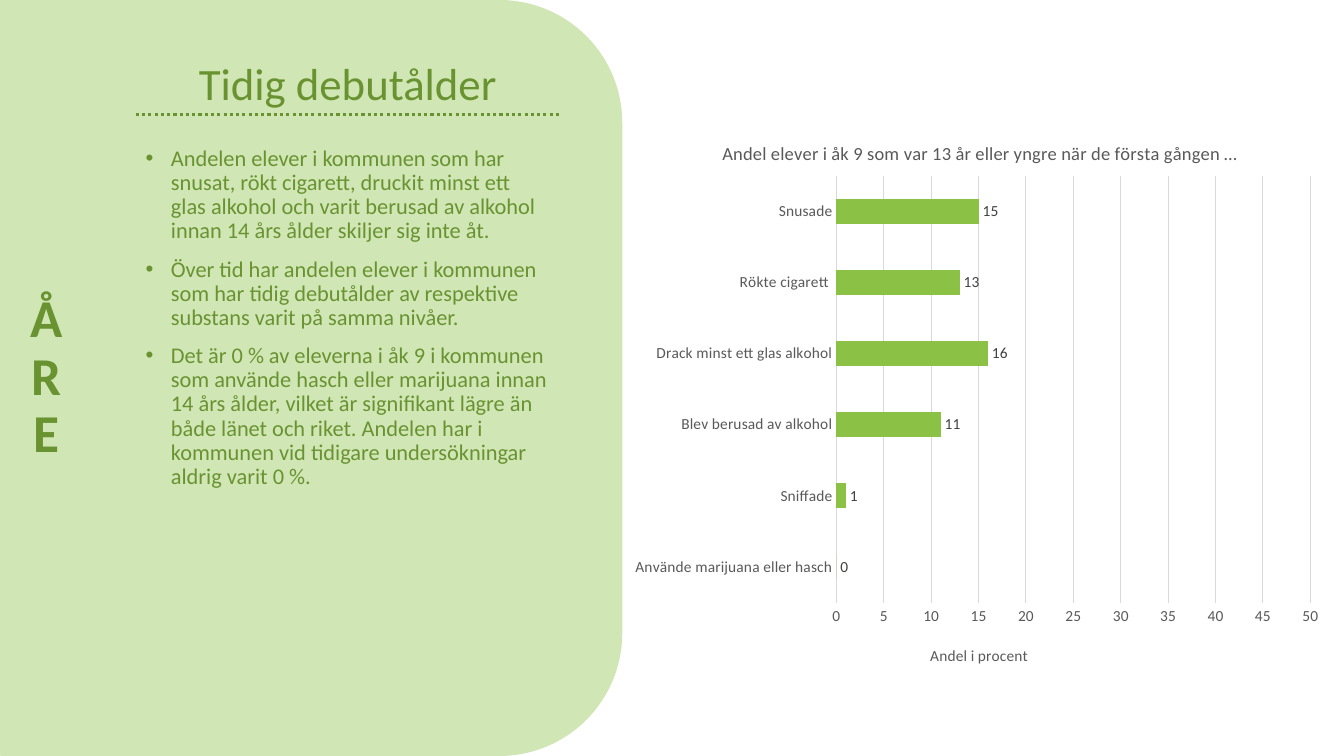
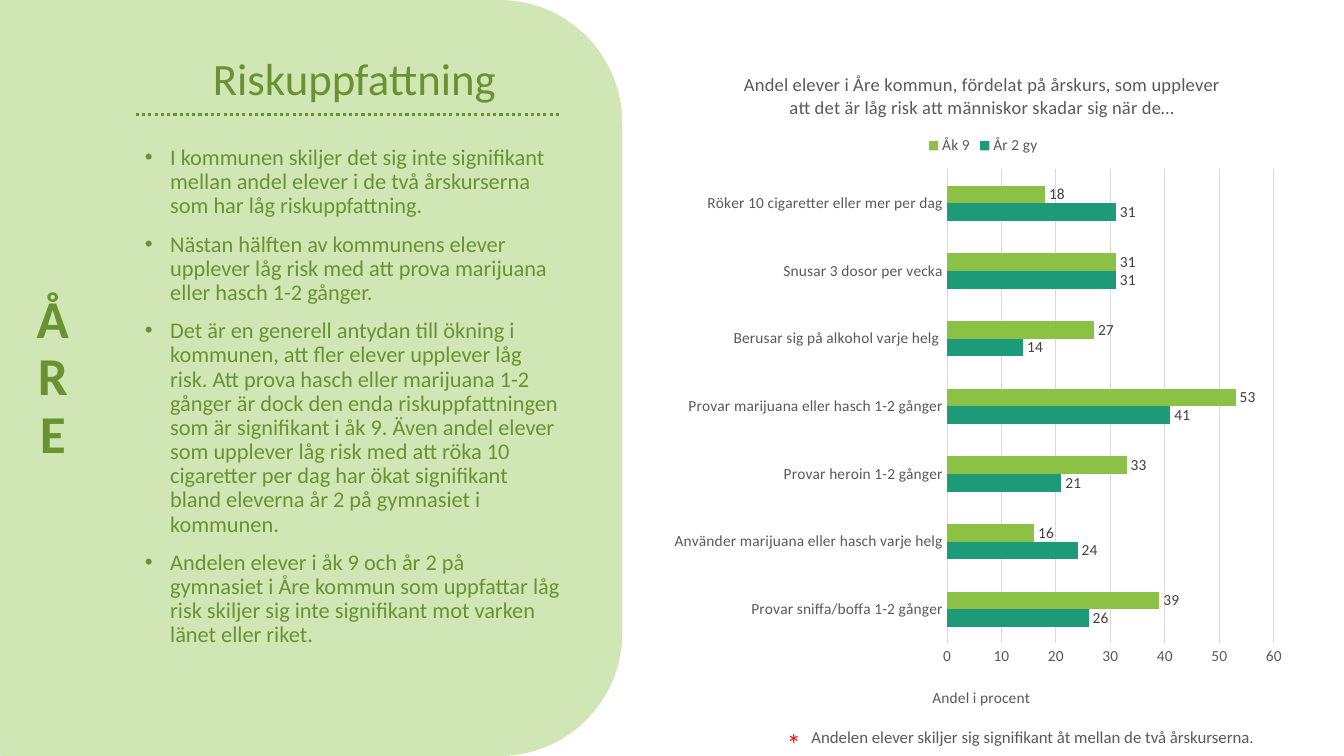
import pptx
import pptx.util
import pptx.dml.color
import pptx.chart.data
import pptx.enum.chart
import pptx.enum.dml
import pptx.enum.shapes
import pptx.enum.text
import pptx.oxml
import pptx.oxml.ns
import lxml.etree

Pt = pptx.util.Pt
qn = pptx.oxml.ns.qn
Align = pptx.enum.text.PP_ALIGN
Anchor = pptx.enum.text.MSO_ANCHOR
Kind = pptx.enum.chart.XL_CHART_TYPE
Mark = pptx.enum.chart.XL_TICK_MARK

FACE = "Calibri"
PALE, DARK, LIME, TEAL = "D1E6B5", "699331", "8BC145", "1D9A78"
GRAY, RULE, INK, RED = "595959", "D9D9D9", "404040", "FF0000"
HEAD = {"size": Pt(32), "color": DARK}
BODY = {"size": Pt(16), "color": DARK}
TOWN = {"size": Pt(38), "color": DARK, "bold": True}
STAR = {"size": Pt(20), "color": RED}
NOTE = {"size": Pt(12), "color": GRAY}
AXIS = {"size": Pt(11), "color": GRAY, "bold": False}
NAME = {"size": Pt(13.2), "color": GRAY, "bold": False}
LABEL = {"size": Pt(11), "color": INK, "bold": False}
MID = {"alignment": Align.CENTER, "line_spacing": 0.9}
LIST = {"line_spacing": 0.9, "space_before": Pt(10)}


def tint(code):
    """Return the colour for a hex string."""
    return pptx.dml.color.RGBColor.from_string(code)


def paint(fill, code):
    """Give a fill one solid colour."""
    fill.solid()
    fill.fore_color.rgb = tint(code)


def style(font, look):
    """Set a font from a dict of format values."""
    font.name = FACE
    for key, value in look.items():
        if key == "color":
            font.color.rgb = tint(value)
        else:
            setattr(font, key, value)


def place(box):
    """Turn a box of points into lengths."""
    return [Pt(side) for side in box]


def write(slide, box, rows, look, form=None, anchor=Anchor.TOP):
    """Add a text box with one paragraph for each row."""
    frame = slide.shapes.add_textbox(*place(box)).text_frame
    frame.word_wrap = True
    frame.vertical_anchor = anchor
    for i, row in enumerate(rows):
        para = frame.paragraphs[0] if i == 0 else frame.add_paragraph()
        for key, value in (form or {}).items():
            setattr(para, key, value)
        run = para.add_run()
        run.text = row
        style(run.font, look)
    return frame


def dot(para):
    """Give a paragraph a hanging bullet."""
    props = para._p.get_or_add_pPr()
    props.set("marL", str(Pt(18)))
    props.set("indent", str(-Pt(18)))
    lxml.etree.SubElement(props, qn("a:buFont")).set("typeface", "Arial")
    lxml.etree.SubElement(props, qn("a:buChar")).set("char", "•")


def panel(slide, box, head, rows, spots):
    """Draw the green side panel with town, title and bullets."""
    left, top = box[:2]
    back = slide.shapes.add_shape(
        pptx.enum.shapes.MSO_SHAPE.ROUNDED_RECTANGLE, *place(box))
    back.shadow.inherit = False
    paint(back.fill, PALE)
    back.line.fill.background()
    rule = slide.shapes.add_connector(
        pptx.enum.shapes.MSO_CONNECTOR.STRAIGHT,
        Pt(left + 179), Pt(top + 82), Pt(left + 482), Pt(top + 82))
    rule.line.color.rgb = tint(DARK)
    rule.line.width = Pt(2.25)
    rule.line.dash_style = pptx.enum.dml.MSO_LINE.ROUND_DOT
    lxml.etree.SubElement(rule._element.spPr, qn("a:effectLst"))
    title, body, town = [(left + x, top + y, w, h) for x, y, w, h in spots]
    write(slide, title, [head], HEAD, MID, Anchor.BOTTOM)
    for para in write(slide, body, rows, BODY, LIST).paragraphs:
        dot(para)
    frame = write(slide, town, ["ÅRE"], TOWN, MID, Anchor.BOTTOM)
    frame._txBody.bodyPr.set("vert", "wordArtVert")


def pin(host, box, spot, inner=False):
    """Fix a chart part at a spot in points from the chart's corner."""
    for old in host.findall(qn("c:layout")):
        host.remove(old)
    node = pptx.oxml.parse_xml(
        "<c:layout %s/>" % pptx.oxml.ns.nsdecls("c"))
    hold = lxml.etree.SubElement(node, qn("c:manualLayout"))
    items = [("layoutTarget", "inner")] if inner else []
    items += [("xMode", "edge"), ("yMode", "edge")]
    sizes = (box[2], box[3]) * 2
    items += [(key, "%.4f" % (part / full))
              for key, part, full in zip("xywh", spot, sizes)]
    for key, value in items:
        lxml.etree.SubElement(hold, qn("c:" + key)).set("val", value)
    over = host.find(qn("c:overlay"))
    if over is None:
        host.insert(0, node)
    else:
        over.addprevious(node)


def label(title, text, look):
    """Fill a chart or axis title."""
    run = title.text_frame.paragraphs[0].add_run()
    run.text = text
    style(run.font, look)


def bars(slide, box, name, cats, sets, top, step, spots):
    """Add a bar chart with its parts pinned inside the box."""
    data = pptx.chart.data.CategoryChartData(number_format="0")
    data.categories = cats
    for key, vals, _ in sets:
        data.add_series(key, vals)
    chart = slide.shapes.add_chart(
        Kind.BAR_CLUSTERED, *place(box), data).chart
    style(chart.font, AXIS)
    chart.has_title = True
    label(chart.chart_title, name, NAME)
    pin(chart.chart_title._element, box, spots["title"])
    plot = chart.plots[0]
    plot.gap_width = 182
    plot.overlap = 0
    plot.vary_by_categories = False
    pin(plot._element.getparent(), box, spots["plot"], True)
    for line, (_, _, code) in zip(plot.series, sets):
        paint(line.format.fill, code)
        line.invert_if_negative = False
        tags = line.data_labels
        tags.show_value = True
        tags.number_format = "0"
        tags.number_format_is_linked = False
        tags.position = pptx.enum.chart.XL_LABEL_POSITION.OUTSIDE_END
        style(tags.font, LABEL)
    cat, val = chart.category_axis, chart.value_axis
    for axis in (cat, val):
        axis.major_tick_mark = axis.minor_tick_mark = Mark.NONE
        style(axis.tick_labels.font, AXIS)
    cat.has_major_gridlines = False
    val.has_major_gridlines = True
    for line in (cat.format.line, val.major_gridlines.format.line):
        line.color.rgb = tint(RULE)
        line.width = Pt(0.75)
    val.format.line.fill.background()
    scale = {"minimum_scale": 0, "maximum_scale": top, "major_unit": step}
    for key, value in scale.items():
        setattr(val, key, value)
    val.tick_labels.number_format = "0"
    val.tick_labels.number_format_is_linked = False
    label(val.axis_title, "Andel i procent", AXIS)
    pin(val.axis_title._element, box, spots["axis"])
    chart.has_legend = "legend" in spots
    if chart.has_legend:
        chart.legend.position = pptx.enum.chart.XL_LEGEND_POSITION.TOP
        chart.legend.include_in_layout = False
        style(chart.legend.font, AXIS)
        pin(chart.legend._element, box, spots["legend"])


def debut(slide, side):
    """Build the slide on early debut age."""
    panel(slide, side, "Tidig debutålder", [
        "Andelen elever i kommunen som har snusat, rökt cigarett, druckit "
        "minst ett glas alkohol och varit berusad av alkohol innan 14 års "
        "ålder skiljer sig inte åt.",
        "Över tid har andelen elever i kommunen som har tidig debutålder av "
        "respektive substans varit på samma nivåer.",
        "Det är 0 % av eleverna i åk 9 i kommunen som använde hasch eller "
        "marijuana innan 14 års ålder, vilket är signifikant lägre än både "
        "länet och riket. Andelen har i kommunen vid tidigare undersökningar "
        "aldrig varit 0 %.",
    ], [(195.5, 11.5, 270, 70.5), (179, 101.5, 303, 322), (82, 4, 66, 532)])
    bars(slide, (443.5, 82, 508, 406),
         "Andel elever i åk 9 som var 13 år eller yngre när de första gången …",
         ["Använde marijuana eller hasch", "Sniffade", "Blev berusad av alkohol",
          "Drack minst ett glas alkohol", "Rökte cigarett ", "Snusade"],
         [("Åk 9", [0, 1, 11, 16, 13, 15], LIME)], 50, 5,
         {"title": (70, 16), "plot": (154, 43.5, 338.5, 305),
          "axis": (219, 377)})


def risk(slide, side):
    """Build the slide on how risk is seen."""
    panel(slide, side, "Riskuppfattning", [
        "I kommunen skiljer det sig inte signifikant mellan andel elever i "
        "de två årskurserna som har låg riskuppfattning.",
        "Nästan hälften av kommunens elever upplever låg risk med att prova "
        "marijuana eller hasch 1-2 gånger.",
        "Det är en generell antydan till ökning i kommunen, att fler elever "
        "upplever låg risk. Att prova hasch eller marijuana 1-2 gånger är "
        "dock den enda riskuppfattningen som är signifikant i åk 9. Även "
        "andel elever som upplever låg risk med att röka 10 cigaretter per "
        "dag har ökat signifikant bland eleverna år 2 på gymnasiet i kommunen.",
        "Andelen elever i åk 9 och år 2 på gymnasiet i Åre kommun som "
        "uppfattar låg risk skiljer sig inte signifikant mot varken länet "
        "eller riket.",
    ], [(179, 21, 312.5, 57.5), (178.5, 101, 312.5, 416), (82, 8.5, 75.5, 523.5)])
    bars(slide, (473, 32.5, 452, 484.5),
         "Andel elever i Åre kommun, fördelat på årskurs, som upplever att "
         "det är låg risk att människor skadar sig när de…",
         ["Provar sniffa/boffa 1-2 gånger",
          "Använder marijuana eller hasch varje helg",
          "Provar heroin 1-2 gånger", "Provar marijuana eller hasch 1-2 gånger",
          "Berusar sig på alkohol varje helg ", "Snusar 3 dosor per vecka",
          "Röker 10 cigaretter eller mer per dag"],
         [("År 2 gy", [26, 24, 21, 41, 14, 31, 31], TEAL),
          ("Åk 9", [39, 16, 33, 53, 27, 31, 18], LIME)], 60, 10,
         {"title": (56, 16), "plot": (203.5, 88.5, 233.5, 338.5),
          "axis": (191, 456), "legend": (187, 62)})
    write(slide, (555, 515.5, 34.5, 24.5), ["*"], STAR)
    write(slide, (572.5, 515.5, 339, 22),
          ["Andelen elever skiljer sig signifikant åt mellan de två "
           "årskurserna."], NOTE)


def main():
    """Build and save the deck."""
    deck = pptx.Presentation()
    deck.slide_width, deck.slide_height = Pt(960), Pt(540)
    for build in (debut, risk):
        build(deck.slides.add_slide(deck.slide_layouts[6]),
              (-82, 0, 526.5, 540))
    deck.save("out.pptx")


if __name__ == "__main__":
    main()
